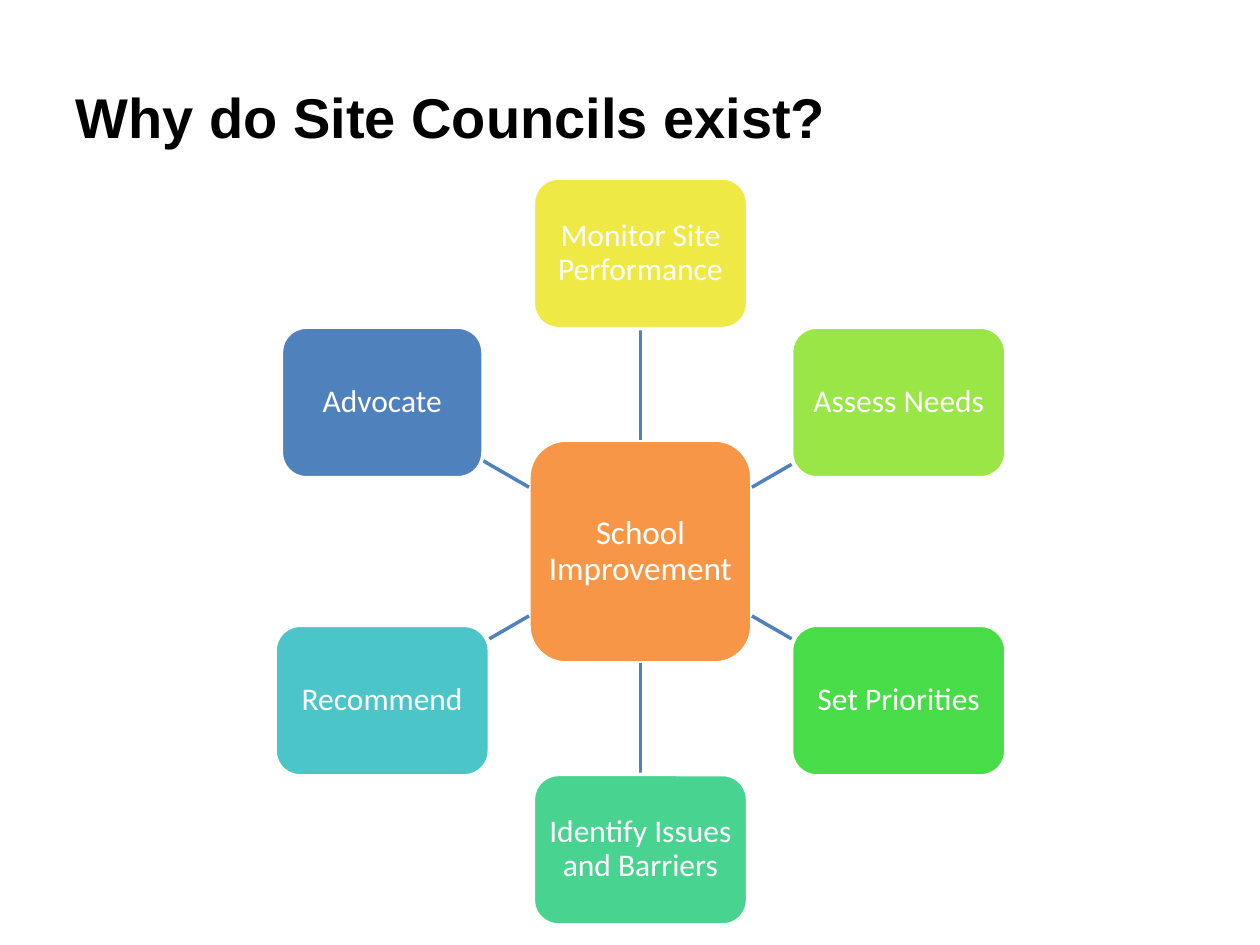
import math
from dataclasses import dataclass
from lxml import etree
from pptx import Presentation, util as u
from pptx.dml.color import RGBColor
from pptx.enum import shapes, text
from pptx.oxml.ns import qn


@dataclass(frozen=True)
class Theme:
    heading: str = "Arial"
    body: str = "Calibri"
    black: str = "000000"
    white: str = "FFFFFF"
    hub: str = "F79646"
    spoke: str = "4F81BD"
    title_size: int = 32
    hub_size: int = 19
    node_size: int = 18
    line: int = 2


THEME = Theme()
CENTER = (366, 315.2)
RADIUS = 170.4
HUB = (127.4, 127.4)
NODES = [
    ("Monitor Site Performance", "EFE946", 122.4),
    ("Assess Needs", "99E646", 122.4),
    ("Set Priorities", "48DD48", 122.4),
    ("Identify Issues and Barriers", "49D390", 122.4),
    ("Recommend", "4CC5C8", 122.4),
    ("Advocate", "4F81BD", 115.2),
]
NODE_HEIGHT = 86


def apply(obj, **values):
    for name, value in values.items():
        setattr(obj, name, value)


def set_font(p, face, size, color, bold=False):
    apply(p.font, name=face, size=u.Pt(size), bold=bold)
    p.font.color.rgb = RGBColor.from_string(color)


def add_title(s, label):
    sp = s.shapes.title
    apply(sp, left=u.Pt(36), top=u.Pt(21.6), width=u.Pt(576), height=u.Pt(90))
    tf = sp.text_frame
    tf.text = label
    apply(tf, vertical_anchor=text.MSO_ANCHOR.MIDDLE, word_wrap=True)
    p = tf.paragraphs[0]
    p.alignment = text.PP_ALIGN.LEFT
    set_font(p, THEME.heading, THEME.title_size, THEME.black, True)


def add_box(s, label, center, size, fill, font_size):
    left, top = (c - d / 2 for c, d in zip(center, size))
    sp = s.shapes.add_shape(shapes.MSO_SHAPE.ROUNDED_RECTANGLE,
                            *map(u.Pt, (left, top, *size)))
    sp.shadow.inherit = False
    sp.fill.solid()
    sp.fill.fore_color.rgb = RGBColor.from_string(fill)
    sp.line.color.rgb = RGBColor.from_string(THEME.white)
    sp.line.width = u.Pt(THEME.line)
    tf = sp.text_frame
    tf.text = label
    inset = u.Pt(3.6)
    apply(tf, word_wrap=True, vertical_anchor=text.MSO_ANCHOR.MIDDLE,
          margin_left=inset, margin_right=inset,
          margin_top=inset, margin_bottom=inset)
    p = tf.paragraphs[0]
    apply(p, alignment=text.PP_ALIGN.CENTER, line_spacing=0.9)
    set_font(p, THEME.body, font_size, THEME.white)


def point_at(angle, distance):
    return (CENTER[0] + distance * math.cos(angle),
            CENTER[1] + distance * math.sin(angle))


def edge_distance(size, angle):
    return min(d / 2 / max(abs(f(angle)), 0.01)
               for d, f in zip(size, (math.cos, math.sin)))


def add_spoke(s, angle, size):
    start = point_at(angle, edge_distance(HUB, angle))
    end = point_at(angle, RADIUS - edge_distance(size, angle))
    c = s.shapes.add_connector(shapes.MSO_CONNECTOR.STRAIGHT,
                               *map(u.Pt, (*start, *end)))
    c.line.color.rgb = RGBColor.from_string(THEME.spoke)
    c.line.width = u.Pt(THEME.line)
    etree.SubElement(c._element.spPr, qn("a:effectLst"))


def main():
    prs = Presentation()
    apply(prs, slide_width=u.Pt(720), slide_height=u.Pt(540))
    s = prs.slides.add_slide(prs.slide_layouts[5])
    add_title(s, "Why do Site Councils exist?")
    add_box(s, "School Improvement", CENTER, HUB, THEME.hub, THEME.hub_size)
    for i, (label, fill, width) in enumerate(NODES):
        angle = math.radians(360 / len(NODES) * i - 90)
        size = (width, NODE_HEIGHT)
        add_spoke(s, angle, size)
        add_box(s, label, point_at(angle, RADIUS), size, fill, THEME.node_size)
    prs.save("out.pptx")


if __name__ == "__main__":
    main()
